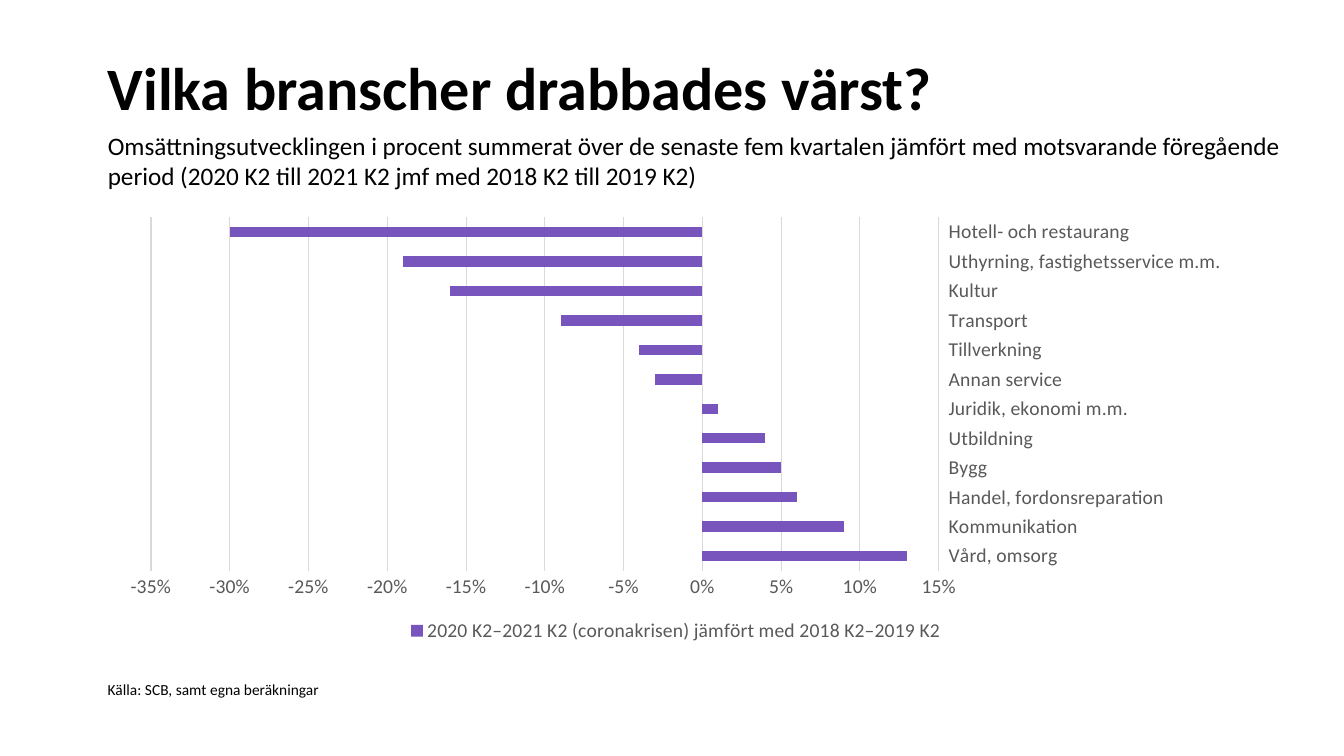
import pptx
import pptx.chart.data
import pptx.dml.color
import pptx.enum.chart
import pptx.enum.text
import pptx.oxml
import pptx.util

Pt = pptx.util.Pt
RGBColor = pptx.dml.color.RGBColor
Anchor = pptx.enum.text.MSO_ANCHOR

BLACK = RGBColor(0x00, 0x00, 0x00)
GRAY = RGBColor(0x59, 0x59, 0x59)
GRID = RGBColor(0xD9, 0xD9, 0xD9)
PURPLE = RGBColor(0x78, 0x54, 0xBD)
FONT = "Calibri"

SERIES_NAME = "2020 K2–2021 K2 (coronakrisen) jämfört med 2018 K2–2019 K2"
# Listed from the bottom bar to the top bar
TURNOVER_CHANGE = {
    "Vård, omsorg": 0.13,
    "Kommunikation": 0.09,
    "Handel, fordonsreparation": 0.06,
    "Bygg": 0.05,
    "Utbildning": 0.04,
    "Juridik, ekonomi m.m.": 0.01,
    "Annan service": -0.03,
    "Tillverkning": -0.04,
    "Transport": -0.09,
    "Kultur": -0.16,
    "Uthyrning, fastighetsservice m.m.": -0.19,
    "Hotell- och restaurang": -0.3,
}


def set_font(font, size, color, bold=False):
    font.name = FONT
    font.size = Pt(size)
    font.bold = bold
    font.color.rgb = color


def add_text(slide, text, box, size, bold=False, anchor=Anchor.TOP,
             line_spacing=None):
    shape = slide.shapes.add_textbox(*[Pt(length) for length in box])
    frame = shape.text_frame
    frame.word_wrap = True
    frame.vertical_anchor = anchor
    frame.margin_left = frame.margin_right = 0
    frame.margin_top = frame.margin_bottom = 0
    paragraph = frame.paragraphs[0]
    paragraph.line_spacing = line_spacing
    run = paragraph.add_run()
    run.text = text
    set_font(run.font, size, BLACK, bold)


def add_heading(slide, left, top, width):
    add_text(slide, "Vilka branscher drabbades värst?",
             (left, top, width, 82), 43, bold=True,
             anchor=Anchor.BOTTOM, line_spacing=0.9)
    add_text(slide,
             "Omsättningsutvecklingen i procent summerat över de senaste fem "
             "kvartalen jämfört med motsvarande föregående period "
             "(2020 K2 till 2021 K2 jmf med 2018 K2 till 2019 K2)",
             (left, top + 86.4, width, 42.5), 18)


def set_plot_layout(chart, x, y, width, height):
    """Fix the inner plot area, in fractions of the chart."""
    plot_area = chart.plots[0]._element.getparent()
    for layout in plot_area.findall(pptx.oxml.ns.qn("c:layout")):
        plot_area.remove(layout)
    plot_area.insert(0, pptx.oxml.parse_xml(
        f'<c:layout {pptx.oxml.ns.nsdecls("c")}><c:manualLayout>'
        '<c:layoutTarget val="inner"/>'
        '<c:xMode val="edge"/><c:yMode val="edge"/>'
        f'<c:x val="{x}"/><c:y val="{y}"/>'
        f'<c:w val="{width}"/><c:h val="{height}"/>'
        '</c:manualLayout></c:layout>'))


def add_turnover_chart(slide, left, top, width, height):
    data = pptx.chart.data.CategoryChartData(number_format="0%")
    data.categories = list(TURNOVER_CHANGE)
    data.add_series(SERIES_NAME, list(TURNOVER_CHANGE.values()))
    chart = slide.shapes.add_chart(
        pptx.enum.chart.XL_CHART_TYPE.BAR_CLUSTERED,
        Pt(left), Pt(top), Pt(width), Pt(height), data).chart
    set_font(chart.font, 14, BLACK)
    chart.has_title = False
    set_plot_layout(chart, 0.038, 0.02, 0.693, 0.807)

    # Bars
    plot = chart.plots[0]
    plot.vary_by_categories = False
    plot.gap_width = 182
    series = plot.series[0]
    series.invert_if_negative = False
    series.format.fill.solid()
    series.format.fill.fore_color.rgb = PURPLE

    # Axes
    for axis in (chart.category_axis, chart.value_axis):
        axis.major_tick_mark = pptx.enum.chart.XL_TICK_MARK.NONE
        axis.minor_tick_mark = pptx.enum.chart.XL_TICK_MARK.NONE
        set_font(axis.tick_labels.font, 14, GRAY)
    category_axis = chart.category_axis
    category_axis.tick_label_position = pptx.enum.chart.XL_TICK_LABEL_POSITION.HIGH
    value_axis = chart.value_axis
    value_axis.minimum_scale = -0.35
    value_axis.maximum_scale = 0.15
    value_axis.major_unit = 0.05
    value_axis.tick_labels.number_format = "0%"
    value_axis.tick_labels.number_format_is_linked = False
    value_axis.format.line.fill.background()
    for line in (category_axis.format.line, value_axis.major_gridlines.format.line):
        line.color.rgb = GRID
        line.width = Pt(0.75)

    # Legend
    chart.has_legend = True
    chart.legend.position = pptx.enum.chart.XL_LEGEND_POSITION.BOTTOM
    chart.legend.include_in_layout = False
    set_font(chart.legend.font, 14, GRAY)


def add_source(slide, left, top, width):
    add_text(slide, "Källa: SCB, samt egna beräkningar",
             (left, top, width, 14), 11)


def main():
    presentation = pptx.Presentation()
    presentation.slide_width = Pt(960)
    presentation.slide_height = Pt(540)
    slide = presentation.slides.add_slide(presentation.slide_layouts[6])
    margin = 77
    add_heading(slide, margin, 6.5, 854)
    add_turnover_chart(slide, margin, 149, 812, 313)
    add_source(slide, margin, 486, 257)
    presentation.save("out.pptx")


if __name__ == "__main__":
    main()
